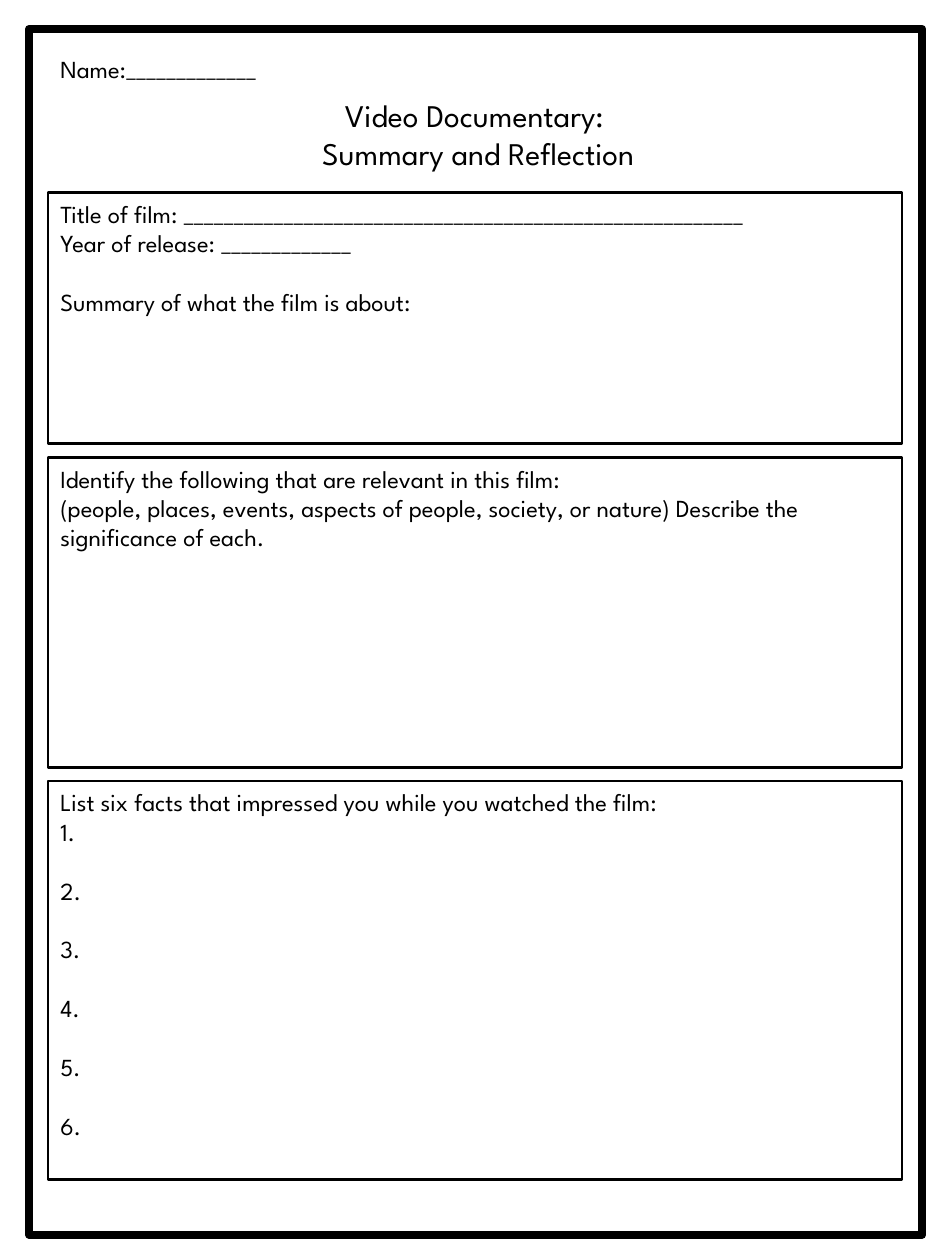
from pptx import Presentation
from pptx.dml.color import RGBColor
from pptx.enum.shapes import MSO_SHAPE as Shape
from pptx.enum.text import MSO_ANCHOR as Anchor, MSO_AUTO_SIZE as Fit, PP_ALIGN as Align
from pptx.util import Inches, Pt

FONT = "League Spartan"
INK = "000000"
LEFT, WIDTH = 0.38, 6.78
GAP = 16.8


def color(code):
    """Turn a hex string into a colour."""
    return RGBColor.from_string(code)


def place(item, left, top, width, height):
    """Set the position and size of an item in inches."""
    item.left, item.top = Inches(left), Inches(top)
    item.width, item.height = Inches(width), Inches(height)


def write(frame, text, size=14, align=Align.LEFT, gaps=()):
    """Fill a frame with text, leaving a line free above each index in gaps."""
    frame.text = text
    frame.word_wrap = True
    frame.auto_size = Fit.NONE
    frame.vertical_anchor = Anchor.TOP
    for index, para in enumerate(frame.paragraphs):
        para.alignment = align
        para.space_before = Pt(GAP if index in gaps else 0)
        for run in para.runs:
            run.font.name = FONT
            run.font.size = Pt(size)
            run.font.color.rgb = color(INK)


def add_title(slide, text):
    """Place the centred heading."""
    title = slide.shapes.title
    place(title, 1.49, 0.71, 4.55, 0.71)
    write(title.text_frame, text, 18, Align.CENTER)


def add_label(slide, text):
    """Add the line for the name."""
    label = slide.shapes.add_textbox(Inches(LEFT), Inches(0.38), Inches(2.59), Inches(0.34))
    write(label.text_frame, text)


def add_frame(slide, left, top, width, height, weight):
    """Add an unfilled outlined rectangle."""
    box = slide.shapes.add_shape(
        Shape.RECTANGLE, Inches(left), Inches(top), Inches(width), Inches(height))
    box.shadow.inherit = False
    box.fill.background()
    box.line.color.rgb = color(INK)
    box.line.width = Pt(weight)
    return box


def add_box(slide, top, height, lines, gaps=()):
    """Add a framed writing area with its prompts."""
    box = add_frame(slide, LEFT, top, WIDTH, height, 1.5)
    write(box.text_frame, "\n".join(lines), gaps=gaps)


def main():
    """Build the worksheet."""
    deck = Presentation()
    deck.slide_width, deck.slide_height = Inches(7.5), Inches(10)
    slide = deck.slides.add_slide(deck.slide_layouts[5])
    add_frame(slide, 0.23, 0.23, 7.09, 9.57, 4.5)
    add_label(slide, "Name:" + "_" * 13)
    add_title(slide, "Video Documentary:\n Summary and Reflection")
    add_box(slide, 1.53, 1.99, [
        "Title of film: " + "_" * 56,
        "Year of release: " + "_" * 13,
        "Summary of what the film is about:",
    ], gaps=[2])
    add_box(slide, 3.63, 2.46, [
        "Identify the following that are relevant in this film:",
        "(people, places, events, aspects of people, society, or nature) "
        "Describe the significance of each.",
    ])
    facts = [f"{number}." for number in range(1, 7)]
    add_box(slide, 6.2, 3.16, [
        "List six facts that impressed you while you watched the film:", *facts,
    ], gaps=range(2, 7))
    deck.save("out.pptx")


if __name__ == "__main__":
    main()
